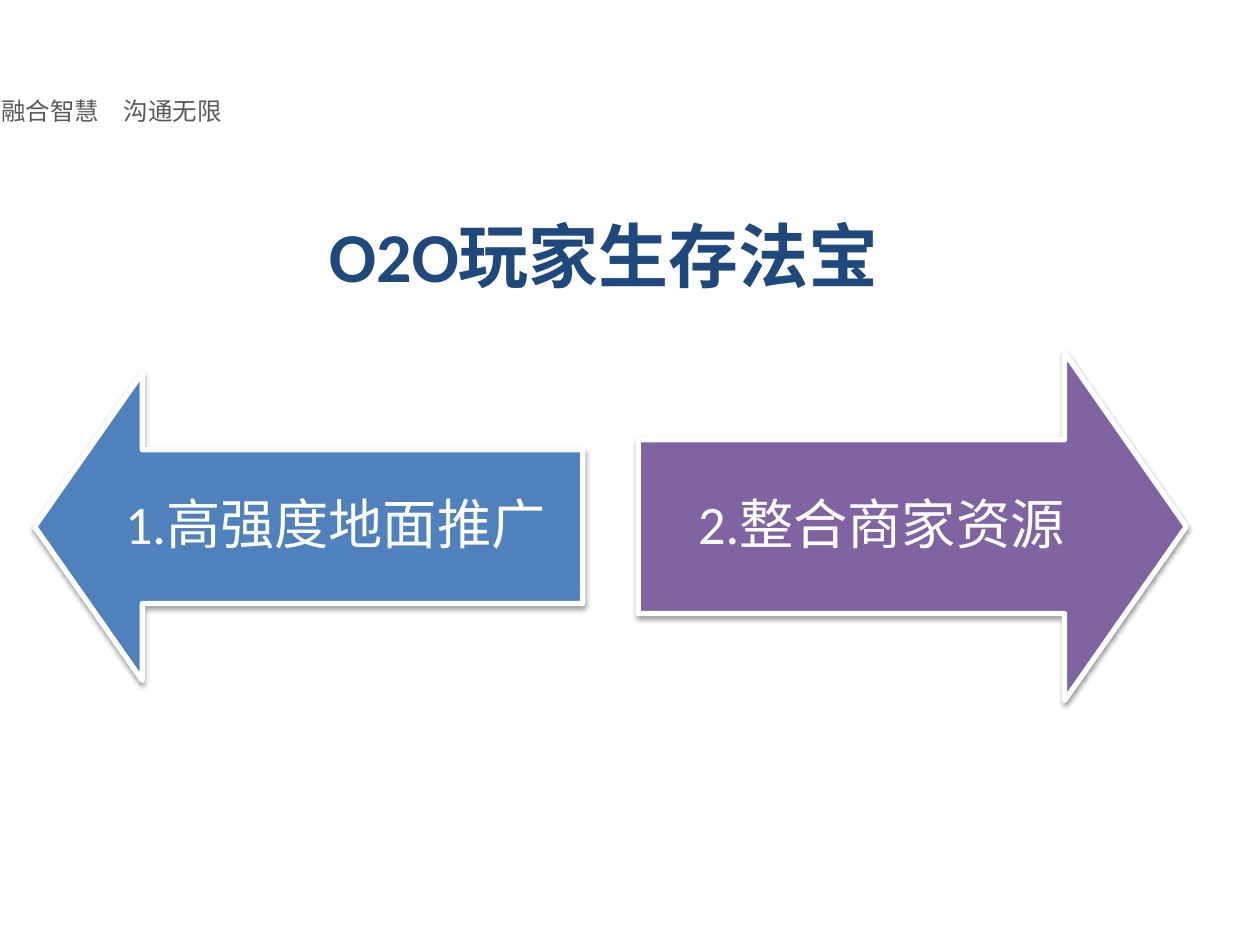
"""Build a slide with two opposed arrows under a title."""
import dataclasses

import lxml.etree
import pptx
import pptx.dml.color
import pptx.enum.shapes
import pptx.enum.text
import pptx.oxml
import pptx.oxml.ns
import pptx.util

Inches = pptx.util.Inches
Pt = pptx.util.Pt
Anchor = pptx.enum.text.MSO_ANCHOR
Align = pptx.enum.text.PP_ALIGN
Fit = pptx.enum.text.MSO_AUTO_SIZE

COLORS = {
    "white": "FFFFFF",
    "gray": "595959",
    "navy": "1F497D",
    "blue": "4F81BD",
    "purple": "8064A2",
}
LATIN = "Calibri"
ASIAN = "Noto Sans CJK JP"
LENGTH = 4.35
MIDDLE = 4.18
PAD = 0.24
SHADOW = (
    f'<a:effectLst {pptx.oxml.ns.nsdecls("a")}>'
    f'<a:outerShdw blurRad="{Pt(3.1)}" dist="{Pt(1.6)}" dir="5400000" rotWithShape="0">'
    '<a:srgbClr val="000000"><a:alpha val="38000"/></a:srgbClr>'
    "</a:outerShdw></a:effectLst>"
)


@dataclasses.dataclass
class Arrow:
    text: str
    color: str
    turn: int
    center: float
    breadth: float
    left: float
    width: float


ARROWS = [
    Arrow("1.高强度地面推广", "blue", 270, 2.45, 2.44, 0.7, 3.92),
    Arrow("2.整合商家资源", "purple", 90, 7.24, 2.76, 5.06, 3.87),
]


def tint(name: str) -> pptx.dml.color.RGBColor:
    """Return the named colour."""
    return pptx.dml.color.RGBColor.from_string(COLORS[name])


def write(para, text: str, size: float, color: str, face: str = LATIN, bold: bool = False) -> None:
    """Add one styled run to a paragraph."""
    run = para.add_run()
    run.text = text
    font = run.font
    font.size = Pt(size)
    font.name = face
    font.bold = bold
    font.color.rgb = tint(color)
    asian = lxml.etree.SubElement(run._r.get_or_add_rPr(), pptx.oxml.ns.qn("a:ea"))
    asian.set("typeface", ASIAN)


def draw(slide, arrow: Arrow) -> None:
    """Draw a turned arrow and its label."""
    shape = slide.shapes.add_shape(
        pptx.enum.shapes.MSO_SHAPE.UP_ARROW,
        Inches(arrow.center - arrow.breadth / 2), Inches(MIDDLE - LENGTH / 2),
        Inches(arrow.breadth), Inches(LENGTH),
    )
    shape.rotation = arrow.turn
    shape.adjustments[0] = 0.5
    shape.adjustments[1] = 0.35
    shape.fill.solid()
    shape.fill.fore_color.rgb = tint(arrow.color)
    shape.line.color.rgb = tint("white")
    shape.line.width = Pt(3)
    shape._element.spPr.append(pptx.oxml.parse_xml(SHADOW))

    height = arrow.breadth / 2
    label = slide.shapes.add_textbox(
        Inches(arrow.left), Inches(MIDDLE - height / 2), Inches(arrow.width), Inches(height)
    )
    frame = label.text_frame
    frame.word_wrap = True
    frame.vertical_anchor = Anchor.MIDDLE
    frame.margin_left = frame.margin_right = Inches(PAD)
    frame.margin_top = frame.margin_bottom = Inches(PAD)
    para = frame.paragraphs[0]
    para.alignment = Align.CENTER
    para.line_spacing = 0.9
    para.space_after = Pt(11)
    write(para, arrow.text, 31, "white")


def main() -> None:
    """Build and save the slide."""
    deck = pptx.Presentation()
    deck.slide_width, deck.slide_height = Inches(10), Inches(7.5)
    slide = deck.slides.add_slide(deck.slide_layouts.get_by_name("Title Only"))

    motto = slide.shapes.add_textbox(Inches(-0.09), Inches(0.71), Inches(2.11), Inches(0.34))
    motto.text_frame.auto_size = Fit.SHAPE_TO_FIT_TEXT
    write(motto.text_frame.paragraphs[0], "融合智慧　沟通无限", 14, "gray", ASIAN)

    for arrow in ARROWS:
        draw(slide, arrow)

    title = slide.shapes.title
    title.left, title.top = Inches(2.51), Inches(1.64)
    title.width, title.height = Inches(4.62), Inches(0.77)
    frame = title.text_frame
    frame.word_wrap = True
    frame.auto_size = Fit.SHAPE_TO_FIT_TEXT
    frame.vertical_anchor = Anchor.TOP
    para = frame.paragraphs[0]
    para.alignment = Align.LEFT
    write(para, "O2O玩家生存法宝", 40, "navy", bold=True)

    deck.save("out.pptx")


if __name__ == "__main__":
    main()
